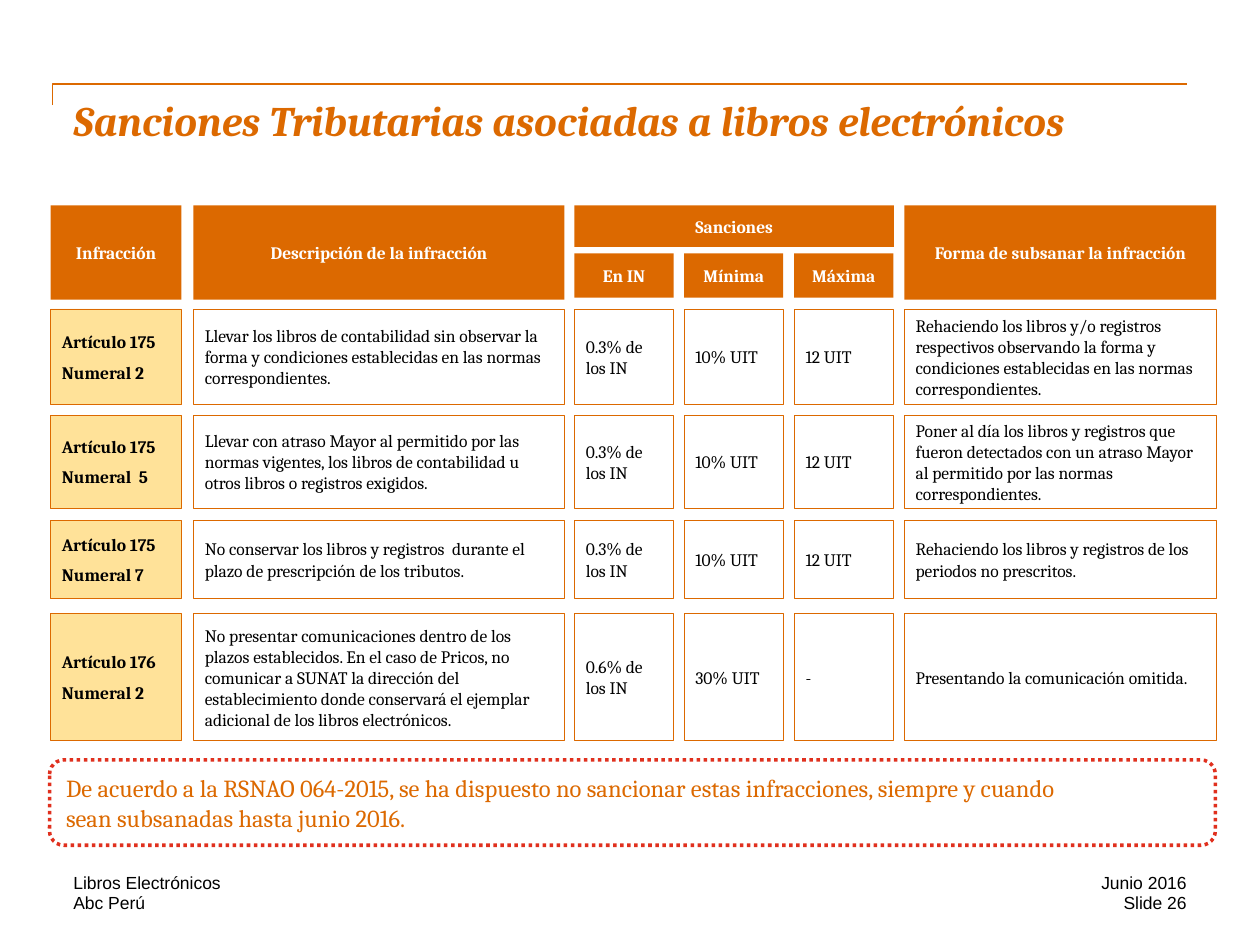
from pptx import Presentation
from pptx.dml.color import RGBColor
from pptx.enum import dml, shapes, text
from pptx.util import Cm, Pt

HUES = {"orange": "DC6900", "cream": "FFE299", "white": "FFFFFF",
        "black": "000000", "red": "E0301E"}
LEFT, MID, RIGHT = text.PP_ALIGN.LEFT, text.PP_ALIGN.CENTER, text.PP_ALIGN.RIGHT


def hue(name):
    return RGBColor.from_string(HUES[name])


def write(frame, lines, color="black", size=10, bold=False, face="Cambria",
          align=LEFT, after=0, inset=(0, 0), anchor=text.MSO_ANCHOR.MIDDLE):
    """Fill a text frame with one paragraph per line; inset is (side, top)."""
    frame.word_wrap = True
    frame.auto_size = text.MSO_AUTO_SIZE.NONE
    frame.vertical_anchor = anchor
    frame.margin_left = frame.margin_right = Cm(inset[0])
    frame.margin_top = frame.margin_bottom = Cm(inset[1])
    frame.text = "\n".join(lines)
    for par in frame.paragraphs:
        par.alignment, par.space_after = align, Pt(after)
        par.font.name, par.font.size, par.font.bold = face, Pt(size), bold
        par.font.color.rgb = hue(color)


deck = Presentation()
deck.slide_width, deck.slide_height = Cm(25.4), Cm(19.05)
slide = deck.slides.add_slide(deck.slide_layouts[5])
tree = slide.shapes

# Title and the corner rule above it
title = tree.title
title.left, title.top, title.width, title.height = Cm(1.48), Cm(1.9), Cm(22.43), Cm(2.54)
write(title.text_frame, ["Sanciones Tributarias asociadas a libros electrónicos"],
      "orange", 24, True, anchor=text.MSO_ANCHOR.TOP)
title.text_frame.paragraphs[0].font.italic = True

pen = tree.build_freeform(Cm(1.06), Cm(2.12))
pen.add_line_segments([(Cm(1.06), Cm(1.7)), (Cm(23.92), Cm(1.7))], close=False)
rule = pen.convert_to_shape()
rule.shadow.inherit = False
rule.fill.background()
rule.line.color.rgb, rule.line.width = hue("orange"), Pt(1)

# Grid of boxes: (left, width) of columns, (top, height) of rows
cols = [(1.02, 2.64), (3.9, 7.48), (11.58, 2), (13.79, 2), (16.01, 2), (18.23, 6.29)]
rows = [(6.23, 1.93), (8.37, 1.88), (10.49, 1.58), (12.37, 2.56)]
top, tall = 4.14, 1.9
low, short = 5.11, 0.89

heads = [
    ("Infracción", *cols[0], top, tall),
    ("Descripción de la infracción", *cols[1], top, tall),
    ("Sanciones", cols[2][0], 6.44, top, 0.84),
    ("En IN", *cols[2], low, short),
    ("Mínima", *cols[3], low, short),
    ("Máxima", *cols[4], low, short),
    ("Forma de subsanar la infracción", *cols[5], top, tall),
]
cases = [
    ("Artículo 175\nNumeral 2",
     "Llevar los libros de contabilidad sin observar la forma y condiciones "
     "establecidas en las normas correspondientes.",
     "0.3% de los IN", "10% UIT", "12 UIT",
     "Rehaciendo los libros y/o registros respectivos observando la forma y "
     "condiciones establecidas en las normas correspondientes."),
    ("Artículo 175\nNumeral  5",
     "Llevar con atraso Mayor al permitido por las normas vigentes, los libros "
     "de contabilidad u otros libros o registros exigidos.",
     "0.3% de los IN", "10% UIT", "12 UIT",
     "Poner al día los libros y registros que fueron detectados con un atraso "
     "Mayor al permitido por las normas correspondientes."),
    ("Artículo 175\nNumeral 7",
     "No conservar los libros y registros  durante el plazo de prescripción de "
     "los tributos.",
     "0.3% de los IN", "10% UIT", "12 UIT",
     "Rehaciendo los libros y registros de los periodos no prescritos."),
    ("Artículo 176\nNumeral 2",
     "No presentar comunicaciones dentro de los plazos establecidos. En el caso "
     "de Pricos, no comunicar a SUNAT la dirección del establecimiento donde "
     "conservará el ejemplar adicional de los libros electrónicos.",
     "0.6% de los IN", "30% UIT", "-",
     "Presentando la comunicación omitida."),
]
boxes = [(*head, "orange") for head in heads]
for row, case in zip(rows, cases):
    for n, (col, words) in enumerate(zip(cols, case)):
        boxes.append((words, *col, *row, "white" if n else "cream"))

for words, x, wide, y, high, fill in boxes:
    box = tree.add_shape(shapes.MSO_SHAPE.RECTANGLE, Cm(x), Cm(y), Cm(wide), Cm(high))
    box.shadow.inherit = False
    box.fill.solid()
    box.fill.fore_color.rgb = hue(fill)
    head = fill == "orange"
    if head:
        box.line.fill.background()
    else:
        box.line.color.rgb, box.line.width = hue("orange"), Pt(0.5)
    write(box.text_frame, words.split("\n"), "white" if head else "black",
          bold=fill != "white", align=MID if head else LEFT,
          after=0 if head else 5.3, inset=(0.23, 0.11))

# Dotted note
note = tree.add_shape(shapes.MSO_SHAPE.ROUNDED_RECTANGLE,
                      Cm(1), Cm(15.32), Cm(23.5), Cm(1.72))
note.shadow.inherit = False
note.fill.background()
note.line.color.rgb, note.line.width = hue("red"), Pt(2)
note.line.dash_style = dml.MSO_LINE.ROUND_DOT
write(note.text_frame,
      ["De acuerdo a la RSNAO 064-2015, se ha dispuesto no sancionar estas "
       "infracciones, siempre y cuando ",
       "sean subsanadas hasta junio 2016."],
      "orange", 14, align=text.PP_ALIGN.JUSTIFY, inset=(0.25, 0))

# Footer
feet = [("Libros Electrónicos", 1.48, 14.6, 17.57, LEFT),
        ("Abc Perú", 1.48, 7.2, 17.99, LEFT),
        ("Junio 2016", 19.68, 4.24, 17.57, RIGHT),
        ("Slide 26", 19.68, 4.24, 17.99, RIGHT)]
for words, x, wide, y, align in feet:
    foot = tree.add_textbox(Cm(x), Cm(y), Cm(wide), Cm(0.42))
    write(foot.text_frame, [words], face="Arial", align=align,
          anchor=text.MSO_ANCHOR.TOP)

deck.save("out.pptx")
